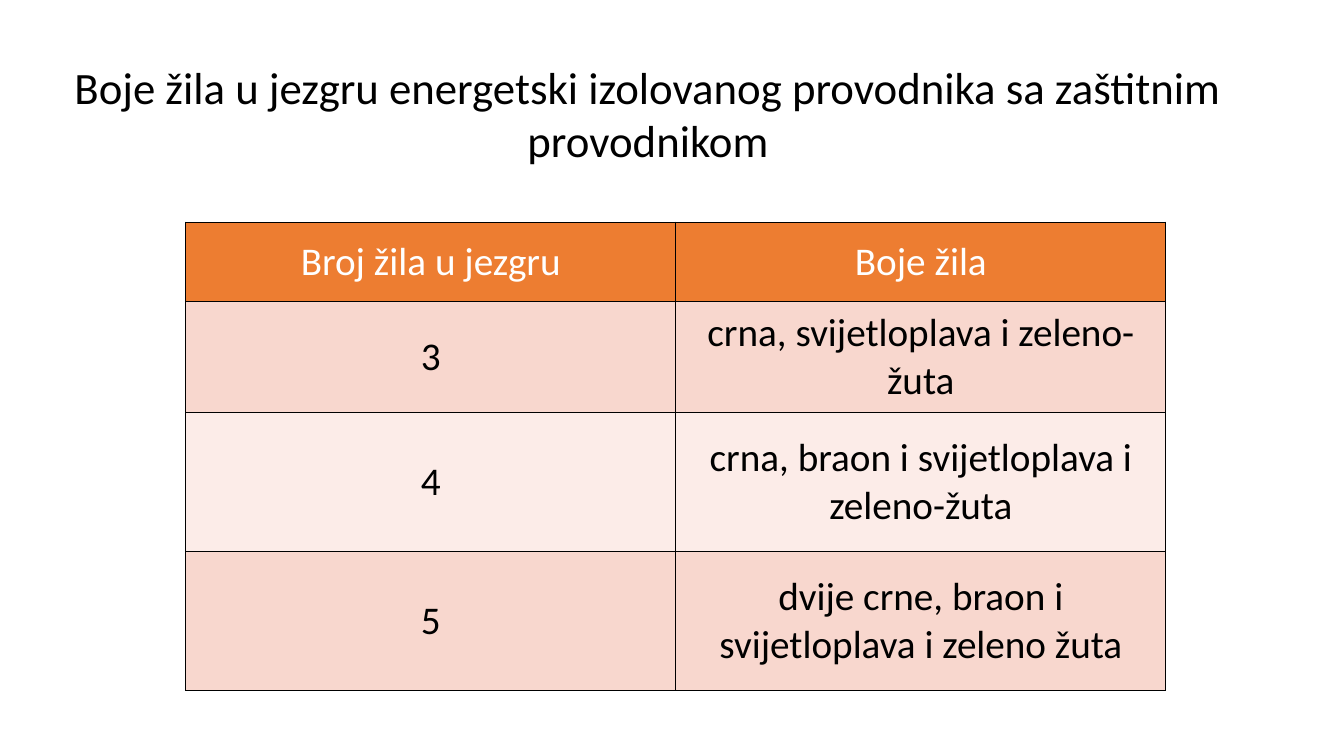
from lxml import etree
from pptx import Presentation
from pptx import util as u
from pptx.dml.color import RGBColor
from pptx.enum import text
from pptx.oxml import ns

HEADING = "Boje žila u jezgru energetski izolovanog provodnika sa zaštitnim provodnikom"
CORES = [
    ("Broj žila u jezgru", "Boje žila"),
    ("3", "crna, svijetloplava i zeleno-žuta"),
    ("4", "crna, braon i svijetloplava i zeleno-žuta"),
    ("5", "dvije crne, braon i svijetloplava i zeleno žuta"),
]
ROW_HEIGHTS = [u.Cm(h) for h in (2.0, 2.8, 3.5, 3.5)]
COLUMN_WIDTH = u.Cm(12.35)
BLACK, WHITE = "000000", "FFFFFF"
HEADER_FILL = "ED7D31"
BAND_FILLS = ("FCECE8", "F8D7CE")


def rgb(hex_color):
    return RGBColor.from_string(hex_color)


def write(frame, words, size, color):
    frame.text = words
    paragraph = frame.paragraphs[0]
    paragraph.alignment = text.PP_ALIGN.CENTER
    font = paragraph.runs[0].font
    font.name, font.size, font.bold = "Calibri", u.Pt(size), False
    font.color.rgb = rgb(color)


def add_borders(cell, color, width):
    properties = cell._tc.get_or_add_tcPr()
    for side in ("lnL", "lnR", "lnT", "lnB"):
        line = etree.SubElement(properties, ns.qn(f"a:{side}"), w=str(u.Pt(width)))
        fill = etree.SubElement(line, ns.qn("a:solidFill"))
        etree.SubElement(fill, ns.qn("a:srgbClr"), val=color)


def main():
    deck = Presentation()
    deck.slide_width, deck.slide_height = u.Cm(33.87), u.Cm(19.05)
    slide = deck.slides.add_slide(deck.slide_layouts[5])

    title = slide.shapes.title
    title.left, title.top = u.Cm(0), u.Cm(1.37)
    title.width, title.height = u.Cm(32.66), u.Cm(3)
    write(title.text_frame, HEADING, 32, BLACK)
    title.text_frame.word_wrap = True
    title.text_frame.auto_size = text.MSO_AUTO_SIZE.SHAPE_TO_FIT_TEXT
    title.text_frame.vertical_anchor = text.MSO_ANCHOR.TOP

    cores = slide.shapes.add_table(
        len(CORES), len(CORES[0]), u.Cm(4.68), u.Cm(5.6),
        COLUMN_WIDTH * len(CORES[0]), sum(ROW_HEIGHTS)).table
    cores.first_row = cores.horz_banding = False
    for column in cores.columns:
        column.width = COLUMN_WIDTH
    for r, (entries, height) in enumerate(zip(CORES, ROW_HEIGHTS)):
        cores.rows[r].height = height
        for c, entry in enumerate(entries):
            cell = cores.cell(r, c)
            write(cell.text_frame, entry, 28, BLACK if r else WHITE)
            cell.vertical_anchor = text.MSO_ANCHOR.MIDDLE
            add_borders(cell, BLACK, 1)
            cell.fill.solid()
            cell.fill.fore_color.rgb = rgb(BAND_FILLS[r % 2] if r else HEADER_FILL)

    deck.save("out.pptx")


if __name__ == "__main__":
    main()
